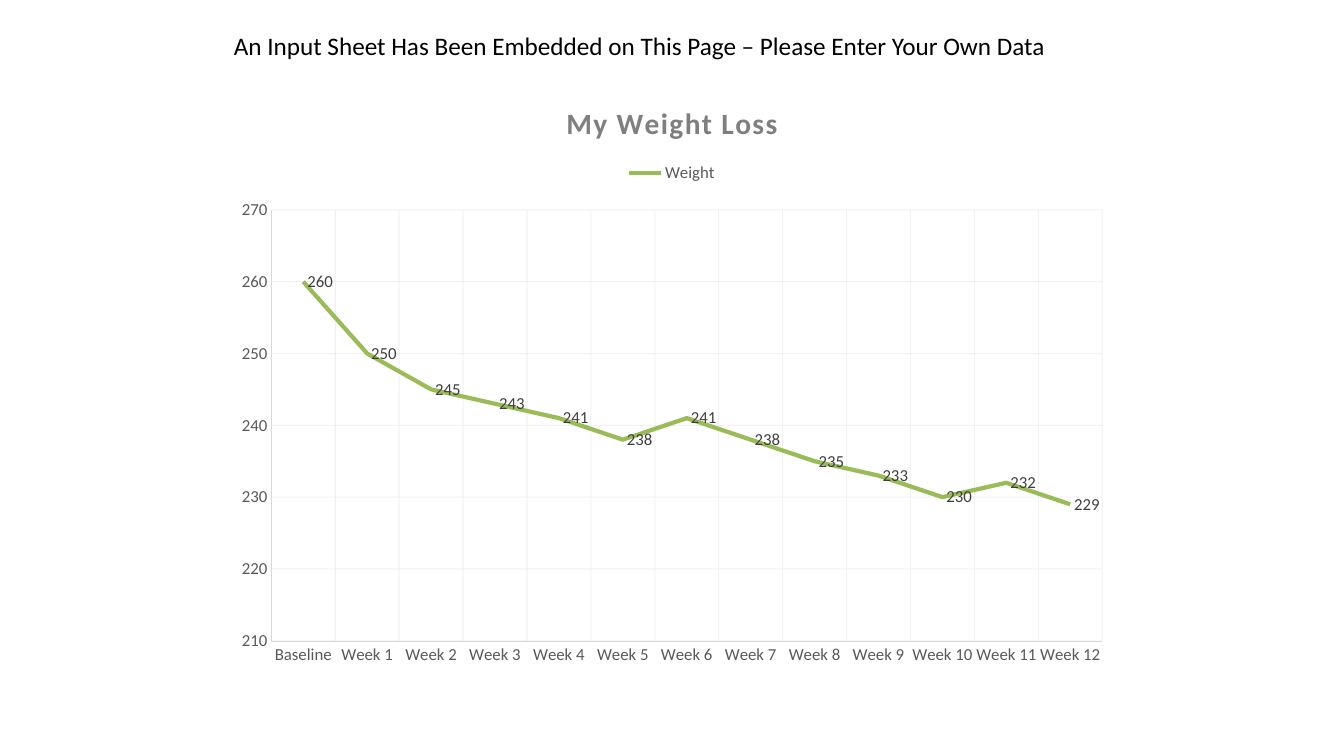
"""Build a slide with a weight loss line chart."""
from lxml import etree
from pptx import Presentation
from pptx.chart.data import CategoryChartData
from pptx.dml.color import RGBColor
from pptx.enum import chart as charts, text
from pptx.oxml import ns
from pptx.util import Inches, Pt

COLORS = {
    "black": "000000",
    "title": "7F7F7F",
    "axis": "595959",
    "label": "404040",
    "line": "D9D9D9",
    "weight": "9BBB59",
}
WEIGHTS = [260, 250, 245, 243, 241, 238, 241, 238, 235, 233, 230, 232, 229]
PLOT_LAYOUT = {
    "layoutTarget": "inner", "xMode": "edge", "yMode": "edge",
    "x": 0.053, "y": 0.218, "w": 0.927, "h": 0.721,
}


class SlideBuilder:
    """Hold the style and the current slide."""

    def __init__(self, presentation, font_name, colors):
        """Add a slide with a title placeholder."""
        self.font_name = font_name
        self.colors = colors
        self.slide = presentation.slides.add_slide(presentation.slide_layouts[5])

    def apply(self, target, values):
        """Set each format value on the target."""
        for name, value in values.items():
            setattr(target, name, value)

    def style_font(self, font, size, color, bold=False):
        """Set the font name, size, weight and color."""
        self.apply(font, {"name": self.font_name, "size": Pt(size), "bold": bold})
        font.color.rgb = RGBColor.from_string(self.colors[color])

    def style_line(self, line, color, width, opacity=100):
        """Set the line color, width and opacity percentage."""
        line.color.rgb = RGBColor.from_string(self.colors[color])
        line.width = Pt(width)
        if opacity < 100:
            rgb = line.fill._xPr.find(".//" + ns.qn("a:srgbClr"))
            etree.SubElement(rgb, ns.qn("a:alpha"), val=str(opacity * 1000))

    def title(self, words, left, top, width, height):
        """Place and format the slide title."""
        shape = self.slide.shapes.title
        self.apply(shape, {"left": Inches(left), "top": Inches(top),
                           "width": Inches(width), "height": Inches(height)})
        frame = shape.text_frame
        frame.text = words
        self.apply(frame, {"word_wrap": True, "vertical_anchor": text.MSO_ANCHOR.TOP,
                           "auto_size": text.MSO_AUTO_SIZE.NONE})
        paragraph = frame.paragraphs[0]
        paragraph.alignment = text.PP_ALIGN.LEFT
        self.style_font(paragraph.runs[0].font, 18, "black")

    def axis(self, axis, values):
        """Format a chart axis and its gridlines."""
        self.apply(axis, {"has_major_gridlines": True,
                          "major_tick_mark": charts.XL_TICK_MARK.NONE,
                          "minor_tick_mark": charts.XL_TICK_MARK.NONE, **values})
        self.style_font(axis.tick_labels.font, 12, "axis")
        self.style_line(axis.format.line, "line", 0.25)
        self.style_line(axis.major_gridlines.format.line, "line", 0.75, 32)

    def plot_layout(self, chart, values):
        """Fix the inner plot area as fractions of the chart."""
        area = chart._chartSpace.chart.plotArea
        for old in area.findall(ns.qn("c:layout")):
            area.remove(old)
        layout = etree.Element(ns.qn("c:layout"))
        manual = etree.SubElement(layout, ns.qn("c:manualLayout"))
        for name, value in values.items():
            etree.SubElement(manual, ns.qn("c:" + name), val=str(value))
        area.insert(0, layout)

    def chart_title(self, chart, words):
        """Write the chart title with spaced letters."""
        chart.has_title = True
        chart.chart_title.include_in_layout = False
        frame = chart.chart_title.text_frame
        frame.text = words
        run = frame.paragraphs[0].runs[0]
        self.style_font(run.font, 21, "title", bold=True)
        run.font._element.set("spc", "100")

    def line_chart(self, heading, name, categories, numbers, left, top, width, height):
        """Add a line chart of one series with value labels."""
        data = CategoryChartData()
        data.categories = categories
        data.add_series(name, numbers)
        chart = self.slide.shapes.add_chart(
            charts.XL_CHART_TYPE.LINE, Inches(left), Inches(top),
            Inches(width), Inches(height), data).chart
        self.style_font(chart.font, 10, "black")
        self.chart_title(chart, heading)
        chart.has_legend = True
        self.apply(chart.legend, {"position": charts.XL_LEGEND_POSITION.TOP,
                                  "include_in_layout": False})
        self.style_font(chart.legend.font, 12, "axis")
        self.axis(chart.category_axis, {})
        self.axis(chart.value_axis, {"minimum_scale": 210, "maximum_scale": 270,
                                     "major_unit": 10})
        self.plot_layout(chart, PLOT_LAYOUT)
        plot = chart.plots[0]
        plot.vary_by_categories = False
        series = plot.series[0]
        series.smooth = False
        series.marker.style = charts.XL_MARKER_STYLE.NONE
        self.style_line(series.format.line, "weight", 3)
        self.apply(series.data_labels, {"show_value": True,
                                        "position": charts.XL_LABEL_POSITION.RIGHT})
        self.style_font(series.data_labels.font, 12, "label")


def main():
    """Build and save the presentation."""
    presentation = Presentation()
    presentation.slide_width = Inches(13.33)
    presentation.slide_height = Inches(7.5)
    builder = SlideBuilder(presentation, "Calibri", COLORS)
    weeks = ["Baseline"] + [f"Week {week}" for week in range(1, len(WEIGHTS))]
    builder.line_chart("My Weight Loss", "Weight", weeks, WEIGHTS,
                       2.22, 0.79, 8.89, 5.93)
    builder.title("An Input Sheet Has Been Embedded on This Page – "
                  "Please Enter Your Own Data", 2.22, 0.25, 9.25, 0.4)
    presentation.save("out.pptx")


if __name__ == "__main__":
    main()
